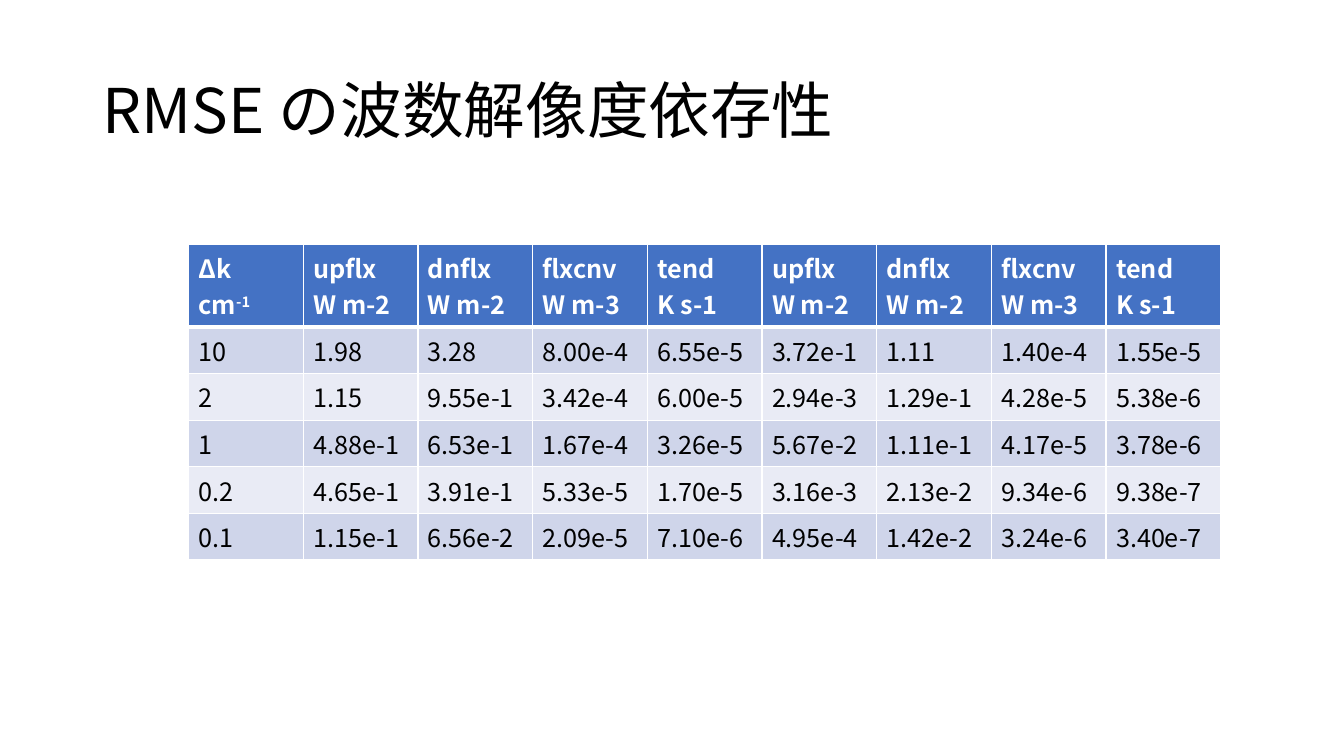
from lxml import etree
from pptx import Presentation
from pptx import util as u
from pptx.dml.color import RGBColor
from pptx.enum import text
from pptx.oxml import ns

FONT = "Noto Sans CJK JP"
BLACK = RGBColor(0x00, 0x00, 0x00)
WHITE = RGBColor(0xFF, 0xFF, 0xFF)
BLUE = RGBColor(0x44, 0x72, 0xC4)
BAND_DARK = RGBColor(0xCF, 0xD5, 0xEA)
BAND_LIGHT = RGBColor(0xE9, 0xEB, 0xF5)

SLIDE_W, SLIDE_H = u.Inches(13.33), u.Inches(7.5)
TITLE_BOX = tuple(u.Inches(v) for v in (0.92, 0.4, 11.5, 1.45))
TABLE_BOX = tuple(u.Inches(v) for v in (1.87, 2.42, 10.24, 2.46))

TITLE_FORMAT = {"size": u.Pt(44), "name": FONT, "bold": False}
CELL_FORMAT = {"size": u.Pt(18), "name": FONT}

# Each heading is a quantity, its unit and the superscript of the unit.
FLUXES = [("upflx", "W m-2", ""), ("dnflx", "W m-2", ""),
          ("flxcnv", "W m-3", ""), ("tend", "K s-1", "")]
HEADINGS = [("Δk", "cm", "-1")] + FLUXES * 2
VALUES = [line.split() for line in (
    "10 1.98 3.28 8.00e-4 6.55e-5 3.72e-1 1.11 1.40e-4 1.55e-5",
    "2 1.15 9.55e-1 3.42e-4 6.00e-5 2.94e-3 1.29e-1 4.28e-5 5.38e-6",
    "1 4.88e-1 6.53e-1 1.67e-4 3.26e-5 5.67e-2 1.11e-1 4.17e-5 3.78e-6",
    "0.2 4.65e-1 3.91e-1 5.33e-5 1.70e-5 3.16e-3 2.13e-2 9.34e-6 9.38e-7",
    "0.1 1.15e-1 6.56e-2 2.09e-5 7.10e-6 4.95e-4 1.42e-2 3.24e-6 3.40e-7",
)]


def add_run(p, words, formats, color, superscript=False):
    r = p.add_run()
    r.text = words
    for name, value in formats.items():
        setattr(r.font, name, value)
    r.font.color.rgb = color
    rPr = r.font._element
    etree.SubElement(rPr, ns.qn("a:ea"), typeface=FONT)
    if superscript:
        rPr.set("baseline", "30000")


def set_borders(cell, top, bottom):
    """Draw white borders; top and bottom are widths in points."""
    tcPr = cell._tc.get_or_add_tcPr()
    widths = {"lnL": 1, "lnR": 1, "lnT": top, "lnB": bottom}
    for i, (side, width) in enumerate(widths.items()):
        ln = etree.Element(ns.qn(f"a:{side}"), w=str(u.Pt(width)))
        fill = etree.SubElement(ln, ns.qn("a:solidFill"))
        etree.SubElement(fill, ns.qn("a:srgbClr"), val=str(WHITE))
        tcPr.insert(i, ln)


def fill_cell(cell, color):
    cell.fill.solid()
    cell.fill.fore_color.rgb = color


def add_title(slide, box):
    sp = slide.shapes.title
    sp.left, sp.top, sp.width, sp.height = box
    tf = sp.text_frame
    tf.word_wrap = True
    tf.auto_size = text.MSO_AUTO_SIZE.NONE
    tf.vertical_anchor = text.MSO_ANCHOR.MIDDLE
    p = tf.paragraphs[0]
    p.alignment = text.PP_ALIGN.LEFT
    p.line_spacing = 0.9
    add_run(p, "RMSE の波数解像度依存性", TITLE_FORMAT, BLACK)


def add_rmse_table(slide, box):
    table = slide.shapes.add_table(len(VALUES) + 1, len(HEADINGS), *box).table
    for col, (quantity, unit, power) in enumerate(HEADINGS):
        cell = table.cell(0, col)
        fill_cell(cell, BLUE)
        set_borders(cell, top=1, bottom=3)
        tf = cell.text_frame
        heading = {**CELL_FORMAT, "bold": True}
        add_run(tf.paragraphs[0], quantity, heading, WHITE)
        p = tf.add_paragraph()
        add_run(p, unit, heading, WHITE)
        if power:
            add_run(p, power, heading, WHITE, superscript=True)

    for row, values in enumerate(VALUES, start=1):
        for col, value in enumerate(values):
            cell = table.cell(row, col)
            fill_cell(cell, BAND_DARK if row % 2 else BAND_LIGHT)
            set_borders(cell, top=3 if row == 1 else 1, bottom=1)
            add_run(cell.text_frame.paragraphs[0], value,
                    {**CELL_FORMAT, "bold": False}, BLACK)


def main():
    prs = Presentation()
    prs.slide_width, prs.slide_height = SLIDE_W, SLIDE_H
    slide = prs.slides.add_slide(prs.slide_layouts.get_by_name("Title Only"))
    add_rmse_table(slide, TABLE_BOX)
    add_title(slide, TITLE_BOX)
    prs.save("out.pptx")


if __name__ == "__main__":
    main()
